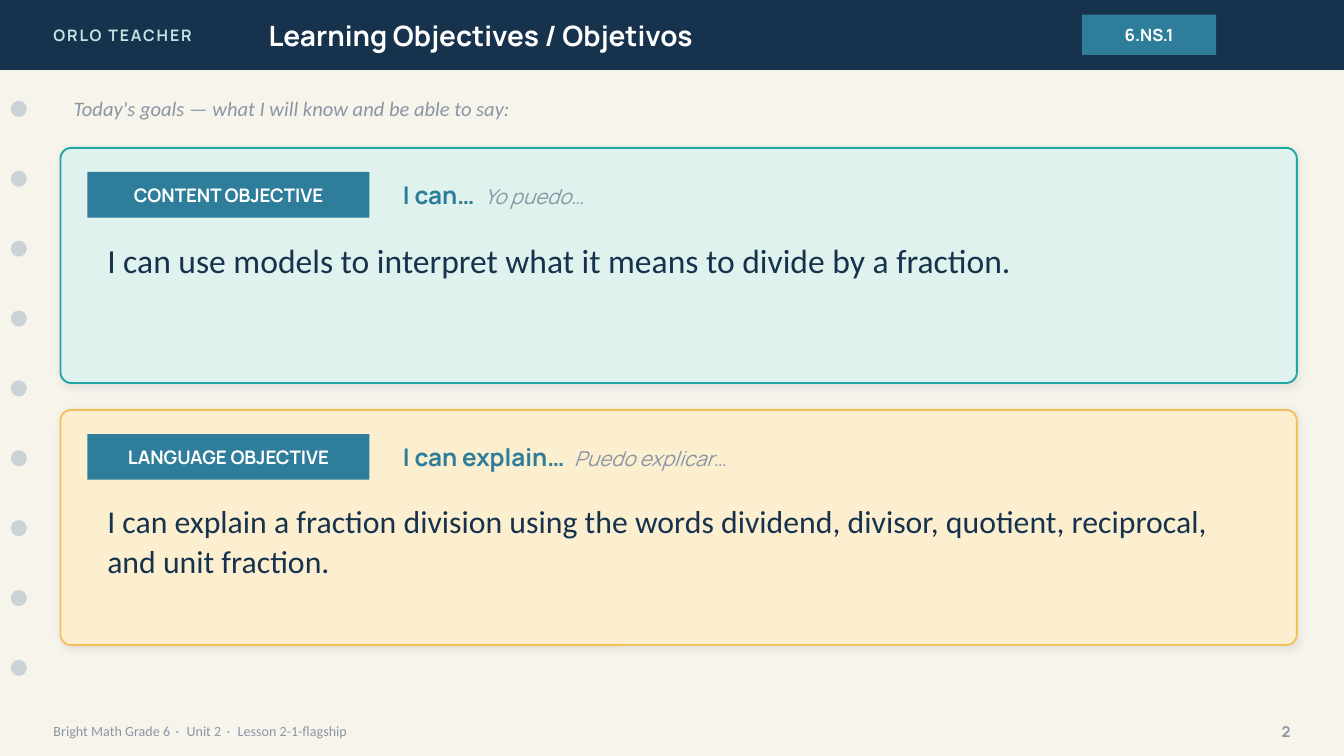
from pptx import Presentation
from pptx.dml.color import RGBColor
from pptx.enum.shapes import MSO_SHAPE
from pptx.enum.text import MSO_ANCHOR, PP_ALIGN
from pptx.oxml import parse_xml
from pptx.oxml.ns import nsdecls
from pptx.util import Inches, Pt

NAVY, TEAL, GREY, WHITE = "17324D", "2E7D9A", "8A96A3", "FFFFFF"
rgb = RGBColor.from_string

deck = Presentation()
deck.slide_width, deck.slide_height = Inches(10), Inches(5.625)
slide = deck.slides.add_slide(deck.slide_layouts[6])
slide.background.fill.solid()
slide.background.fill.fore_color.rgb = rgb("F7F4EC")


def block(kind, area, fill):
    shape = slide.shapes.add_shape(kind, *map(Inches, area))
    shape.shadow.inherit = False
    shape.fill.solid()
    shape.fill.fore_color.rgb = rgb(fill)
    shape.line.fill.background()
    return shape


def write(spot, runs, align=PP_ALIGN.LEFT, anchor=MSO_ANCHOR.MIDDLE):
    """Put (text, size, font, colour, format, tracking in points) runs in a shape or a new box."""
    if isinstance(spot, tuple):
        spot = slide.shapes.add_textbox(*map(Inches, spot))
    frame = spot.text_frame
    frame.word_wrap = True
    frame.vertical_anchor = anchor
    para = frame.paragraphs[0]
    para.alignment = align
    for text, size, face, color, style, *track in runs:
        run = para.add_run()
        run.text = text
        run.font.color.rgb = rgb(color)
        for key, value in {"size": Pt(size), "name": face, **style}.items():
            setattr(run.font, key, value)
        for points in track:
            run._r.get_or_add_rPr().set("spc", str(round(points * 100)))
    return para


bold, slant = {"bold": True}, {"italic": True}

# Header
block(MSO_SHAPE.RECTANGLE, (0, 0, 10, 0.52), NAVY)
write((0.3, 0, 2.4, 0.52), [("ORLO TEACHER", 8.5, "Manrope", "BFE6E2", bold, 1)])
write((1.9, 0, 5.6, 0.52),
      [("Learning Objectives / Objetivos", 15, "Manrope", WHITE, bold)])
code = block(MSO_SHAPE.RECTANGLE, (8.05, 0.11, 1, 0.3), TEAL)
write(code, [("6.NS.1", 9, "Manrope", WHITE, bold)], PP_ALIGN.CENTER)

# Binder holes
for i in range(9):
    block(MSO_SHAPE.OVAL, (0.08, 0.75 + 0.52 * i, 0.12, 0.12), "CBD3D9")

# Footer and lead-in
note = (7.5, "Calibri", GREY, {})
dot = (" · ", *note, 1.13)
write((0.3, 5.3, 7, 0.28),
      [("Bright Math Grade 6", *note), dot, ("Unit 2", *note), dot,
       ("Lesson 2-1-flagship", *note)])
write((9.2, 5.3, 0.5, 0.28), [("2", 8, "Manrope", GREY, bold)], PP_ALIGN.RIGHT)
write((0.45, 0.66, 9.2, 0.3),
      [("Today's goals — what I will know and be able to say:", 11, "Calibri", GREY, slant)])

# Objective cards
cards = [
    ("CONTENT OBJECTIVE", "I can…", "Yo puedo…", "DFF2EE", "1FA6A2", 18,
     "I can use models to interpret what it means to divide by a fraction."),
    ("LANGUAGE OBJECTIVE", "I can explain…", "Puedo explicar…", "FBEFD0", "F2C15B", 17,
     "I can explain a fraction division using the words dividend, divisor, "
     "quotient, reciprocal, and unit fraction."),
]
for i, (label, stem, gloss, fill, edge, size, goal) in enumerate(cards):
    top = 1.1 + 1.95 * i
    card = block(MSO_SHAPE.ROUNDED_RECTANGLE, (0.45, top, 9.2, 1.75), fill)
    card.adjustments[0] = 0.046
    card.line.color.rgb = rgb(edge)
    card.line.width = Pt(1)
    glow = card._element.spPr.find("{*}effectLst")
    glow.append(parse_xml(
        f'<a:outerShdw {nsdecls("a")} blurRad="{Pt(4)}" dist="{Pt(1)}" dir="5400000" '
        'algn="bl" rotWithShape="0"><a:srgbClr val="1C2E42"><a:alpha val="10000"/>'
        '</a:srgbClr></a:outerShdw>'))
    tag = block(MSO_SHAPE.RECTANGLE, (0.65, top + 0.18, 2.1, 0.34), TEAL)
    write(tag, [(label, 10, "Manrope", WHITE, bold)], PP_ALIGN.CENTER)
    write((2.9, top + 0.18, 6.6, 0.34),
          [(stem, 13, "Manrope", TEAL, bold), (" ", 13, "Manrope", TEAL, bold, 2.7),
           (gloss, 11, "Manrope", GREY, slant)])
    body = write((0.7, top + 0.62, 8.7, 1), [(goal, size, "Calibri", NAVY, {})],
                 anchor=MSO_ANCHOR.TOP)
    body.line_spacing = 1.05

deck.save("out.pptx")
